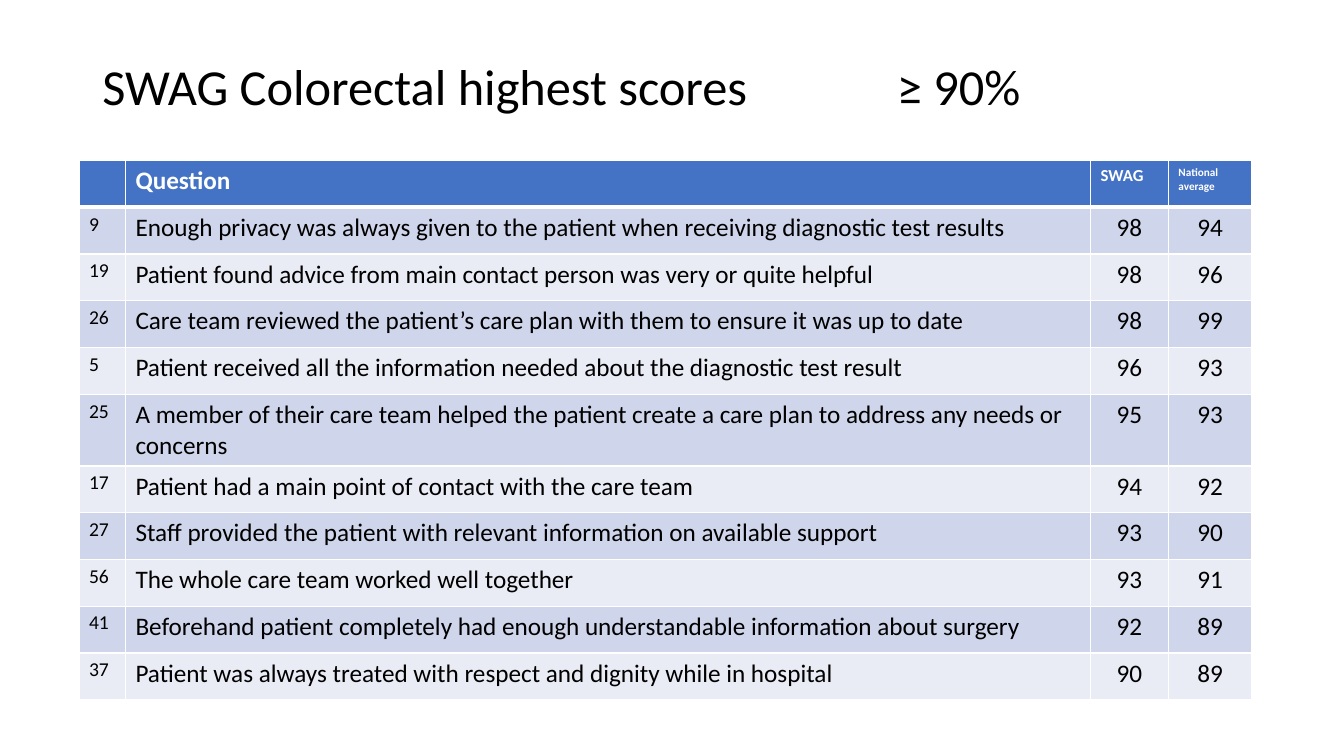
import dataclasses
import typing

import lxml.etree
import pptx
import pptx.dml.color
import pptx.enum.text
import pptx.oxml.ns
import pptx.util

Pt = pptx.util.Pt
ALIGN = pptx.enum.text.PP_ALIGN


@dataclasses.dataclass(frozen=True)
class Theme:
    font: str = "Calibri"
    ink: str = "000000"
    white: str = "FFFFFF"
    header_fill: str = "4472C4"
    band_fills: tuple[str, str] = ("CFD5EA", "E9EBF5")
    title_size: float = 36
    rule: float = 1
    header_rule: float = 3


@dataclasses.dataclass(frozen=True)
class Column:
    heading: str
    width: float
    heading_size: float
    body_size: float
    align: ALIGN


class Score(typing.NamedTuple):
    number: int
    question: str
    swag: int
    national: int
    height: float = 33.4


THEME = Theme()
COLUMNS = [
    Column("", 33.2, 18, 14, ALIGN.LEFT),
    Column("Question", 689.4, 18, 18, ALIGN.LEFT),
    Column("SWAG", 55.6, 12, 18, ALIGN.CENTER),
    Column("National average", 59.8, 8, 18, ALIGN.CENTER),
]
HEADER_HEIGHT = 33.4
SCORES = [
    Score(9, "Enough privacy was always given to the patient when receiving diagnostic test results", 98, 94),
    Score(19, "Patient found advice from main contact person was very or quite helpful", 98, 96),
    Score(26, "Care team reviewed the patient’s care plan with them to ensure it was up to date", 98, 99),
    Score(5, "Patient received all the information needed about the diagnostic test result", 96, 93),
    Score(25, "A member of their care team helped the patient create a care plan to address any needs or concerns",
          95, 93, height=51.2),
    Score(17, "Patient had a main point of contact with the care team", 94, 92),
    Score(27, "Staff provided the patient with relevant information on available support", 93, 90),
    Score(56, "The whole care team worked well together", 93, 91),
    Score(41, "Beforehand patient completely had enough understandable information about surgery", 92, 89),
    Score(37, "Patient was always treated with respect and dignity while in hospital", 90, 89),
]


def style_font(font, size: float, colour: str, bold: bool = False) -> None:
    font.name = THEME.font
    font.size = Pt(size)
    font.bold = bold
    font.color.rgb = pptx.dml.color.RGBColor.from_string(colour)


def add_tab_stop(para, position: float) -> None:
    qn = pptx.oxml.ns.qn
    tabs = lxml.etree.SubElement(para._p.get_or_add_pPr(), qn("a:tabLst"))
    lxml.etree.SubElement(tabs, qn("a:tab"), pos=str(Pt(position)), algn="l")


def draw_borders(cell, top: float, bottom: float) -> None:
    qn = pptx.oxml.ns.qn
    properties = cell._tc.get_or_add_tcPr()
    widths = {"lnL": THEME.rule, "lnR": THEME.rule, "lnT": top, "lnB": bottom}
    for side, width in widths.items():
        line = lxml.etree.SubElement(properties, qn(f"a:{side}"), w=str(Pt(width)))
        fill = lxml.etree.SubElement(line, qn("a:solidFill"))
        lxml.etree.SubElement(fill, qn("a:srgbClr"), val=THEME.white)


def fill_cell(cell, text: str, size: float, colour: str, fill: str, align: ALIGN,
              bold: bool = False) -> None:
    cell.fill.solid()
    cell.fill.fore_color.rgb = pptx.dml.color.RGBColor.from_string(fill)
    cell.text_frame.text = text
    para = cell.text_frame.paragraphs[0]
    para.alignment = align
    style_font(para.font, size, colour, bold)
    for span in para.runs:
        style_font(span.font, size, colour, bold)


def add_title(page) -> None:
    title = page.shapes.title
    title.left, title.top, title.width, title.height = Pt(66), Pt(28.8), Pt(828), Pt(70)
    frame = title.text_frame
    frame.text = "SWAG Colorectal highest scores\t≥ 90%"
    frame.word_wrap = True
    frame.auto_size = pptx.enum.text.MSO_AUTO_SIZE.NONE
    frame.vertical_anchor = pptx.enum.text.MSO_ANCHOR.MIDDLE
    para = frame.paragraphs[0]
    para.alignment = ALIGN.LEFT
    para.line_spacing = 0.9
    add_tab_stop(para, 567.4)
    style_font(para.runs[0].font, THEME.title_size, THEME.ink)


def add_score_table(page) -> None:
    heights = [HEADER_HEIGHT] + [score.height for score in SCORES]
    width = sum(column.width for column in COLUMNS)
    table = page.shapes.add_table(len(heights), len(COLUMNS), Pt(56.4), Pt(114.7),
                                  Pt(width), Pt(sum(heights))).table
    for row, height in zip(table.rows, heights):
        row.height = Pt(height)
    for index, column in enumerate(COLUMNS):
        table.columns[index].width = Pt(column.width)
        header = table.cell(0, index)
        draw_borders(header, THEME.rule, THEME.header_rule)
        fill_cell(header, column.heading, column.heading_size, THEME.white,
                  THEME.header_fill, ALIGN.LEFT, bold=True)
        for row_number, score in enumerate(SCORES, start=1):
            cell = table.cell(row_number, index)
            top = THEME.header_rule if row_number == 1 else THEME.rule
            draw_borders(cell, top, THEME.rule)
            fill_cell(cell, str(score[index]), column.body_size, THEME.ink,
                      THEME.band_fills[(row_number - 1) % 2], column.align)


def main() -> None:
    deck = pptx.Presentation()
    deck.slide_width, deck.slide_height = Pt(960), Pt(540)
    page = deck.slides.add_slide(deck.slide_layouts.get_by_name("Title Only"))
    add_title(page)
    add_score_table(page)
    deck.save("out.pptx")


if __name__ == "__main__":
    main()
